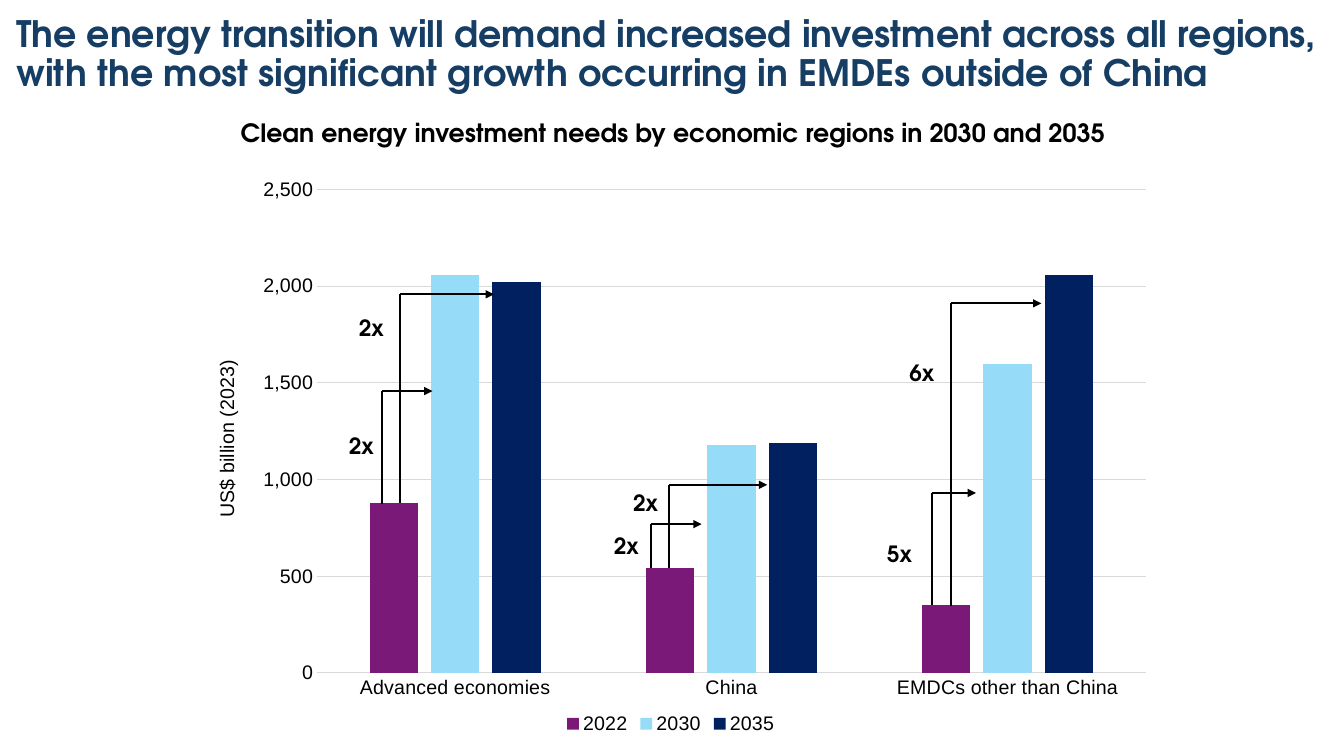
"""Build the slide on clean energy investment needs by economic region."""
from dataclasses import dataclass

from lxml import etree
from pptx import Presentation
from pptx.chart.axis import _BaseAxis
from pptx.chart.chart import Chart
from pptx.chart.data import CategoryChartData
from pptx.dml.color import RGBColor
from pptx.enum.chart import XL_CHART_TYPE, XL_LEGEND_POSITION, XL_TICK_MARK
from pptx.enum.shapes import MSO_CONNECTOR
from pptx.enum.text import MSO_ANCHOR, MSO_AUTO_SIZE, PP_ALIGN
from pptx.oxml.ns import qn
from pptx.shapes.base import BaseShape
from pptx.slide import Slide
from pptx.text.text import Font
from pptx.util import Inches, Pt

COLUMN_CLUSTERED = XL_CHART_TYPE.COLUMN_CLUSTERED
LEGEND_BOTTOM = XL_LEGEND_POSITION.BOTTOM
NO_TICK = XL_TICK_MARK.NONE
STRAIGHT = MSO_CONNECTOR.STRAIGHT
TOP, MIDDLE = MSO_ANCHOR.TOP, MSO_ANCHOR.MIDDLE
NO_AUTOSIZE = MSO_AUTO_SIZE.NONE
LEFT, CENTER = PP_ALIGN.LEFT, PP_ALIGN.CENTER

SLIDE_WIDTH, SLIDE_HEIGHT = Inches(13.33), Inches(7.5)
TITLE_ONLY = 5


@dataclass(frozen=True)
class Theme:
    """Colours, fonts and sizes of the slide."""

    heading_font: str = "TeX Gyre Adventor"
    chart_font: str = "Arial"
    title_size: float = 26
    subtitle_size: float = 18
    label_size: float = 16
    chart_size: float = 14
    arrow_width: float = 1.5
    grid_width: float = 0.75
    title: str = "163E64"
    text: str = "000000"
    grid: str = "D9D9D9"


@dataclass(frozen=True)
class Box:
    """Place and size in percent of the slide's width and height."""

    left: float
    top: float
    width: float
    height: float


@dataclass(frozen=True)
class Series:
    """One year of investment across the regions."""

    year: str
    values: tuple[int, ...]
    color: str


@dataclass(frozen=True)
class Growth:
    """A multiple and the bent arrow beside it, in percent of the slide."""

    multiple: str
    stem: float
    base: float
    turn: float
    tip: float
    label_left: float
    label_top: float
    label_width: float = 6.3


THEME = Theme()
LABEL_HEIGHT = 4.93
TITLE_BOX = Box(0.45, 1.2, 100.75, 12.13)
SUBTITLE_BOX = Box(16.28, 14.8, 67.59, 5.33)
CHART_BOX = Box(14.55, 21.33, 70.74, 76.4)
PLOT_SHARES = {"x": 0.128, "y": 0.049, "w": 0.872, "h": 0.837}
TITLE = ("The energy transition will demand increased investment across all regions, "
         "with the most significant growth occurring in EMDEs outside of China")
SUBTITLE = "Clean energy investment needs by economic regions in 2030 and 2035"
REGIONS = ("Advanced economies", "China", "EMDCs other than China")
INVESTMENT = (
    Series("2022", (880, 540, 350), "7B1979"),
    Series("2030", (2060, 1180, 1600), "96DCF8"),
    Series("2035", (2020, 1190, 2060), "002060"),
)
GROWTHS = (
    Growth("2x", 28.43, 66.67, 51.73, 32.18, 25.21, 56.53),
    Growth("2x", 29.78, 66.53, 38.93, 36.76, 25.96, 40.93),
    Growth("2x", 48.46, 75.2, 69.33, 52.21, 44.94, 69.73, 4.13),
    Growth("2x", 49.81, 75.2, 64.13, 57.09, 46.36, 64),
    Growth("5x", 69.32, 80, 65.2, 72.62, 65.27, 70.8),
    Growth("6x", 70.74, 80.13, 40.13, 77.49, 66.92, 46.8),
)


def across(percent: float) -> int:
    """Return a horizontal length from a share of the slide's width."""
    return round(SLIDE_WIDTH * percent / 100)


def down(percent: float) -> int:
    """Return a vertical length from a share of the slide's height."""
    return round(SLIDE_HEIGHT * percent / 100)


def frame(box: Box) -> tuple[int, int, int, int]:
    """Return left, top, width and height of a box."""
    return across(box.left), down(box.top), across(box.width), down(box.height)


def style_font(font: Font, name: str, size: float, color: str, bold: bool) -> None:
    """Set face, size, colour and weight of a font."""
    font.name, font.size, font.bold = name, Pt(size), bold
    font.color.rgb = RGBColor.from_string(color)


def write_heading(shape: BaseShape, text: str, size: float, color: str,
                  alignment: PP_ALIGN = LEFT, anchor: MSO_ANCHOR = TOP) -> None:
    """Write one bold paragraph in the heading font."""
    text_frame = shape.text_frame
    text_frame.text = text
    text_frame.word_wrap = True
    text_frame.auto_size = NO_AUTOSIZE
    text_frame.vertical_anchor = anchor
    paragraph = text_frame.paragraphs[0]
    paragraph.alignment = alignment
    style_font(paragraph.font, THEME.heading_font, size, color, True)


def add_title(slide: Slide) -> None:
    """Move and fill the title placeholder."""
    title = slide.shapes.title
    title.left, title.top, title.width, title.height = frame(TITLE_BOX)
    write_heading(title, TITLE, THEME.title_size, THEME.title, anchor=MIDDLE)
    title.text_frame.paragraphs[0].line_spacing = 0.9


def style_axis(axis: _BaseAxis) -> None:
    """Give an axis the chart font and no tick marks."""
    style_font(axis.tick_labels.font, THEME.chart_font, THEME.chart_size, THEME.text, False)
    axis.major_tick_mark = axis.minor_tick_mark = NO_TICK


def place_plot(chart: Chart) -> None:
    """Fix the inner plot area at its shares of the chart."""
    plot_area = chart.plots[0]._element.getparent()
    for old_layout in plot_area.findall(qn("c:layout")):
        plot_area.remove(old_layout)
    layout = etree.Element(qn("c:layout"))
    manual = etree.SubElement(layout, qn("c:manualLayout"))
    settings = {"layoutTarget": "inner", "xMode": "edge", "yMode": "edge", **PLOT_SHARES}
    for name, value in settings.items():
        etree.SubElement(manual, qn(f"c:{name}")).set("val", str(value))
    plot_area.insert(0, layout)


def add_investment_chart(slide: Slide) -> None:
    """Add the clustered columns of investment by region and year."""
    data = CategoryChartData(number_format="#,##0")
    data.categories = REGIONS
    for series in INVESTMENT:
        data.add_series(series.year, series.values)
    chart = slide.shapes.add_chart(COLUMN_CLUSTERED, *frame(CHART_BOX), data).chart
    style_font(chart.font, THEME.chart_font, THEME.chart_size, THEME.text, False)
    chart.has_title = False
    chart.has_legend = True
    chart.legend.position = LEGEND_BOTTOM
    chart.legend.include_in_layout = False
    style_font(chart.legend.font, THEME.chart_font, THEME.chart_size, THEME.text, False)
    plot = chart.plots[0]
    plot.gap_width, plot.overlap, plot.vary_by_categories = 219, -27, False
    for column, series in zip(plot.series, INVESTMENT):
        column.format.fill.solid()
        column.format.fill.fore_color.rgb = RGBColor.from_string(series.color)
    category_axis, value_axis = chart.category_axis, chart.value_axis
    style_axis(category_axis)
    style_axis(value_axis)
    value_axis.minimum_scale, value_axis.maximum_scale, value_axis.major_unit = 0, 2500, 500
    value_axis.tick_labels.number_format = "#,##0"
    value_axis.tick_labels.number_format_is_linked = False
    value_axis.format.line.fill.background()
    for line in (category_axis.format.line, value_axis.major_gridlines.format.line):
        line.color.rgb = RGBColor.from_string(THEME.grid)
        line.width = Pt(THEME.grid_width)
    axis_title = value_axis.axis_title.text_frame
    axis_title.text = "US$ billion (2023)"
    style_font(axis_title.paragraphs[0].font, THEME.chart_font, THEME.chart_size, THEME.text, False)
    place_plot(chart)


def add_line(slide: Slide, start: tuple[float, float], end: tuple[float, float],
             arrow: bool = False) -> None:
    """Draw a straight line between two points, with an arrowhead on request."""
    connector = slide.shapes.add_connector(
        STRAIGHT, across(start[0]), down(start[1]), across(end[0]), down(end[1]))
    connector.line.color.rgb = RGBColor.from_string(THEME.text)
    connector.line.width = Pt(THEME.arrow_width)
    properties = connector._element.spPr
    if arrow:
        etree.SubElement(properties.find(qn("a:ln")), qn("a:tailEnd")).set("type", "triangle")
    etree.SubElement(properties, qn("a:effectLst"))


def add_growth(slide: Slide, growth: Growth) -> None:
    """Draw a bent growth arrow and its multiple."""
    corner = (growth.stem, growth.turn)
    add_line(slide, (growth.stem, growth.base), corner)
    add_line(slide, corner, (growth.tip, growth.turn), arrow=True)
    box = Box(growth.label_left, growth.label_top, growth.label_width, LABEL_HEIGHT)
    label = slide.shapes.add_textbox(*frame(box))
    write_heading(label, growth.multiple, THEME.label_size, THEME.text)


def main() -> None:
    """Build and save the presentation."""
    presentation = Presentation()
    presentation.slide_width, presentation.slide_height = SLIDE_WIDTH, SLIDE_HEIGHT
    slide = presentation.slides.add_slide(presentation.slide_layouts[TITLE_ONLY])
    add_title(slide)
    subtitle = slide.shapes.add_textbox(*frame(SUBTITLE_BOX))
    write_heading(subtitle, SUBTITLE, THEME.subtitle_size, THEME.text, CENTER)
    add_investment_chart(slide)
    for growth in GROWTHS:
        add_growth(slide, growth)
    presentation.save("out.pptx")


if __name__ == "__main__":
    main()
